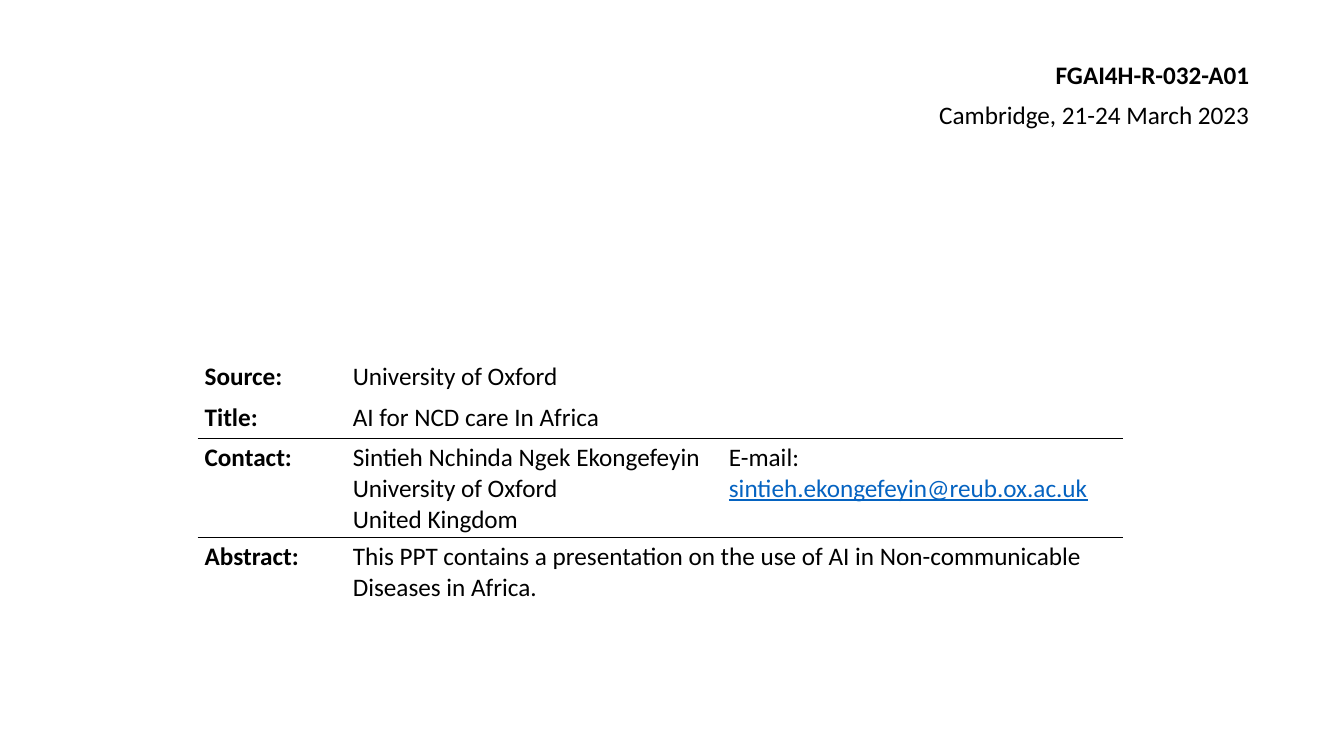
from lxml.etree import SubElement
from pptx import Presentation
from pptx.dml.color import RGBColor
from pptx.enum.text import MSO_AUTO_SIZE, PP_ALIGN
from pptx.oxml.ns import qn
from pptx.util import Inches, Pt

COLORS = {"text": "000000", "link": "0563C1", "rule": "000000"}
FONT = "Calibri"
SIZE = 18

# Text and width of each line at the top right
HEADINGS = [
    ("FGAI4H-R-032-A01", 2.15, True),
    ("Cambridge, 21-24 March 2023", 3.31, False),
]
EMAIL = "sintieh.ekongefeyin@reub.ox.ac.uk"
# Label, details (one entry per column) and row height
DETAILS = [
    ("Source:", ["University of Oxford"], 0.4),
    ("Title:", ["AI for NCD care In Africa"], 0.4),
    ("Contact:", ["Sintieh Nchinda Ngek Ekongefeyin\nUniversity of Oxford\nUnited Kingdom",
                  "E-mail: "], 0.97),
    ("Abstract:", ["This PPT contains a presentation on the use of AI in "
                   "Non-communicable Diseases in Africa."], 0.68),
]
CONTACT_ROW = 2
COLUMNS = [1.47, 3.73, 3.98]
RULED_EDGES = {1: ["B"], 2: ["T", "B"], 3: ["T"]}

SLIDE_W, SLIDE_H = 13.33, 7.5
HEADING_RIGHT, HEADING_TOP, HEADING_H = 12.49, 0.54, 0.4
TABLE_LEFT, TABLE_TOP = 1.96, 3.55


def write(frame, text, bold=False, color="text", underline=False, align=PP_ALIGN.LEFT):
    """Add text to the frame's first paragraph, with line breaks at newlines."""
    paragraph = frame.paragraphs[0]
    paragraph.alignment = align
    for number, line in enumerate(text.split("\n")):
        if number:
            paragraph.add_line_break()
        run = paragraph.add_run()
        run.text = line
        font = run.font
        font.name, font.size = FONT, Pt(SIZE)
        font.bold, font.underline = bold, underline
        font.color.rgb = RGBColor.from_string(COLORS[color])


def style_cell(cell, ruled):
    """Set margins, rule the named edges and leave the rest of the cell clear."""
    cell.margin_left = cell.margin_right = Inches(0.07)
    cell.margin_top = cell.margin_bottom = Inches(0.04)
    properties = cell._tc.get_or_add_tcPr()
    for edge in "LRTB":
        border = SubElement(properties, qn(f"a:ln{edge}"), w=str(Pt(1)))
        if edge in ruled:
            fill = SubElement(border, qn("a:solidFill"))
            SubElement(fill, qn("a:srgbClr"), val=COLORS["rule"])
        else:
            SubElement(border, qn("a:noFill"))
    cell.fill.background()


def add_headings(slide):
    for number, (text, width, bold) in enumerate(HEADINGS):
        box = slide.shapes.add_textbox(
            Inches(HEADING_RIGHT - width), Inches(HEADING_TOP + number * HEADING_H),
            Inches(width), Inches(HEADING_H))
        frame = box.text_frame
        frame.word_wrap = False
        frame.auto_size = MSO_AUTO_SIZE.SHAPE_TO_FIT_TEXT
        write(frame, text, bold=bold, align=PP_ALIGN.RIGHT)


def add_details(slide):
    heights = [height for _, _, height in DETAILS]
    table = slide.shapes.add_table(
        len(DETAILS), len(COLUMNS), Inches(TABLE_LEFT), Inches(TABLE_TOP),
        Inches(sum(COLUMNS)), Inches(sum(heights))).table
    table.first_row = table.horz_banding = False
    for column, width in zip(table.columns, COLUMNS):
        column.width = Inches(width)
    for number, (label, details, height) in enumerate(DETAILS):
        table.rows[number].height = Inches(height)
        cells = [table.cell(number, column) for column in range(len(COLUMNS))]
        for cell in cells:
            style_cell(cell, RULED_EDGES.get(number, []))
        if len(details) == 1:
            cells[1].merge(cells[2])
        write(cells[0].text_frame, label, bold=True)
        for cell, detail in zip(cells[1:], details):
            write(cell.text_frame, detail)
    email_frame = table.cell(CONTACT_ROW, 2).text_frame
    write(email_frame, EMAIL, color="link", underline=True)


def main():
    deck = Presentation()
    deck.slide_width, deck.slide_height = Inches(SLIDE_W), Inches(SLIDE_H)
    slide = deck.slides.add_slide(deck.slide_layouts[6])
    add_headings(slide)
    add_details(slide)
    deck.save("out.pptx")


if __name__ == "__main__":
    main()
